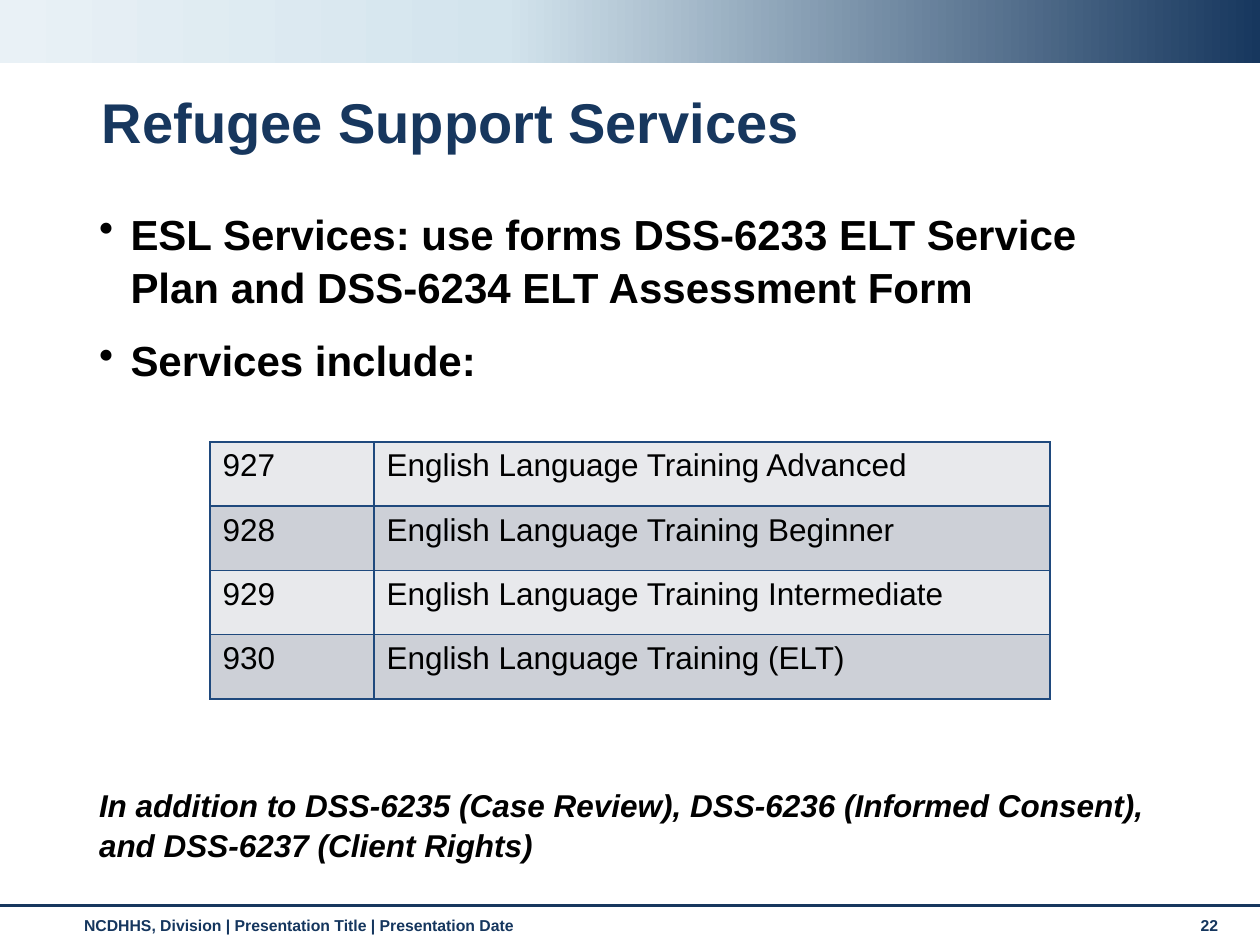
from copy import deepcopy
from dataclasses import dataclass

from lxml import etree
from pptx import Presentation
from pptx import util as u
from pptx.dml.color import RGBColor
from pptx.enum import shapes, text
from pptx.oxml.ns import qn


@dataclass(frozen=True)
class Theme:
    font: str = "Arial"
    navy: str = "17375E"
    footer_ink: str = "15365E"
    ink: str = "000000"
    border: str = "1F497D"
    rows: tuple = ("E8E9EC", "CDD0D7")
    banner: tuple = ((0, "17375E"), (0.6, "D3E4ED"), (1, "E9F1F6"))
    title_size: int = 32
    body_size: int = 24
    note_size: int = 18
    footer_size: int = 9


class SlideBuilder:
    def __init__(self, s, theme):
        self.s = s
        self.theme = theme

    def style(self, p, size, color, bold=False, italic=False):
        p.font.name = self.theme.font
        p.font.size = u.Pt(size)
        p.font.bold = bold
        p.font.italic = italic
        p.font.color.rgb = RGBColor.from_string(color)

    def text_box(self, x, y, w, h, anchor=text.MSO_ANCHOR.TOP, inset=7.2):
        tf = self.s.shapes.add_textbox(u.Pt(x), u.Pt(y), u.Pt(w), u.Pt(h)).text_frame
        tf.word_wrap = True
        tf.vertical_anchor = anchor
        tf.margin_left = u.Pt(inset)
        return tf

    def label(self, x, y, w, h, words, size, color, spacing=1.0, **box):
        p = self.text_box(x, y, w, h, **box).paragraphs[0]
        p.text = words
        p.line_spacing = spacing
        self.style(p, size, color, bold=True)

    def banner(self, x, y, w, h):
        sp = self.s.shapes.add_shape(
            shapes.MSO_SHAPE.RECTANGLE, u.Pt(x), u.Pt(y), u.Pt(w), u.Pt(h))
        sp.shadow.inherit = False
        sp.line.fill.background()
        sp.fill.gradient()
        sp.fill.gradient_angle = 180
        gs_list = sp._element.spPr.find(".//" + qn("a:gsLst"))
        gs_list.append(deepcopy(gs_list[0]))
        for stop, (position, color) in zip(sp.fill.gradient_stops, self.theme.banner):
            stop.position = position
            stop.color.rgb = RGBColor.from_string(color)

    def rule(self, x1, y1, x2, y2, width):
        line = self.s.shapes.add_connector(
            shapes.MSO_CONNECTOR.STRAIGHT, u.Pt(x1), u.Pt(y1), u.Pt(x2), u.Pt(y2))
        line.line.color.rgb = RGBColor.from_string(self.theme.navy)
        line.line.width = u.Pt(width)
        etree.SubElement(line._element.spPr, qn("a:effectLst"))

    def body(self, x, y, w, h, bullets, note, note_gap):
        tf = self.text_box(x, y, w, h)
        for i, words in enumerate([*bullets, note]):
            p = tf.add_paragraph() if i else tf.paragraphs[0]
            p.text = words
            p.line_spacing = 1.05
            is_note = i == len(bullets)
            p.space_before = u.Pt(note_gap if is_note else 12 if i else 0)
            size = self.theme.note_size if is_note else self.theme.body_size
            self.style(p, size, self.theme.ink, bold=True, italic=is_note)
            if not is_note:
                self.bullet(p)

    def bullet(self, p):
        pPr = p._p.get_or_add_pPr()
        pPr.set("marL", str(u.Pt(18)))
        pPr.set("indent", str(-u.Pt(18)))
        mark = etree.Element(qn("a:buChar"), char="•")
        pPr.find(qn("a:defRPr")).addprevious(mark)

    def table(self, x, y, widths, row_height, rows):
        table = self.s.shapes.add_table(
            len(rows), len(widths), u.Pt(x), u.Pt(y),
            u.Pt(sum(widths)), u.Pt(row_height * len(rows))).table
        table.first_row = table.horz_banding = False
        for column, width in zip(table.columns, widths):
            column.width = u.Pt(width)
        for r, values in enumerate(rows):
            table.rows[r].height = u.Pt(row_height)
            for c, value in enumerate(values):
                cell = table.cell(r, c)
                p = cell.text_frame.paragraphs[0]
                p.text = value
                self.style(p, self.theme.note_size, self.theme.ink)
                self.borders(cell)
                cell.fill.solid()
                cell.fill.fore_color.rgb = RGBColor.from_string(self.theme.rows[r % 2])

    def borders(self, cell):
        tcPr = cell._tc.get_or_add_tcPr()
        for side in ("lnL", "lnR", "lnT", "lnB"):
            ln = etree.SubElement(tcPr, qn("a:" + side), w=str(u.Pt(1)))
            fill = etree.SubElement(ln, qn("a:solidFill"))
            etree.SubElement(fill, qn("a:srgbClr"), val=self.theme.border)


def main():
    prs = Presentation()
    prs.slide_width, prs.slide_height = u.Pt(720), u.Pt(540)
    theme = Theme()
    slide = SlideBuilder(prs.slides.add_slide(prs.slide_layouts[6]), theme)

    slide.banner(0, 0, 720, 36)
    slide.rule(0, 517.5, 720, 517.5, 1.75)
    slide.label(41, 519.8, 629, 21, "NCDHHS, Division | Presentation Title | Presentation Date",
                theme.footer_size, theme.footer_ink)
    slide.label(679, 519.8, 32, 21, "22", theme.footer_size, theme.footer_ink)

    slide.label(53.3, 49, 618, 43.2, "Refugee Support Services", theme.title_size, theme.navy,
                spacing=0.9, anchor=text.MSO_ANCHOR.BOTTOM, inset=5)
    slide.body(
        49.5, 114, 621.5, 377,
        ["ESL Services: use forms DSS-6233 ELT Service Plan and DSS-6234 ELT Assessment Form",
         "Services include:"],
        "In addition to DSS-6235 (Case Review), DSS-6236 (Informed Consent), "
        "and DSS-6237 (Client Rights)",
        note_gap=228)
    slide.table(120, 252.6, (93.7, 386.3), 36.7, [
        ("927", "English Language Training Advanced"),
        ("928", "English Language Training Beginner"),
        ("929", "English Language Training Intermediate"),
        ("930", "English Language Training (ELT)"),
    ])
    prs.save("out.pptx")


if __name__ == "__main__":
    main()
